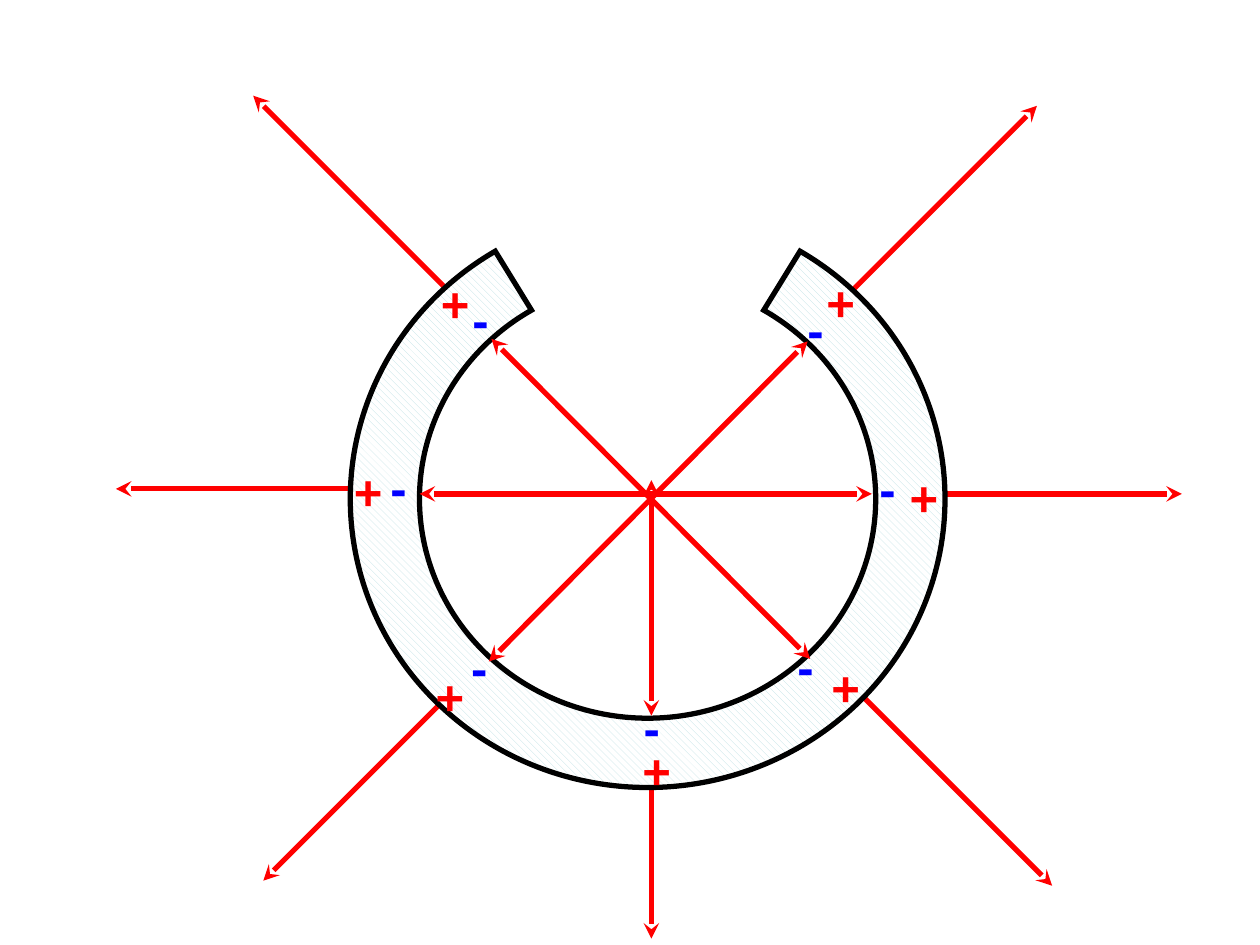
"""Draw a cut charged ring with field arrows inside and outside it."""
from lxml import etree
from pptx import Presentation
from pptx.dml.color import RGBColor
from pptx.enum.dml import MSO_PATTERN
from pptx.enum.shapes import MSO_CONNECTOR, MSO_SHAPE
from pptx.enum.text import MSO_AUTO_SIZE
from pptx.oxml.ns import qn
from pptx.util import Inches, Pt

STRAIGHT = MSO_CONNECTOR.STRAIGHT
ARC = MSO_SHAPE.BLOCK_ARC
HATCH = MSO_PATTERN.WIDE_DOWNWARD_DIAGONAL
GROW = MSO_AUTO_SIZE.SHAPE_TO_FIT_TEXT
RED = RGBColor(0xFF, 0x00, 0x00)
BLUE = RGBColor(0x00, 0x00, 0xFF)
BLACK = RGBColor(0x00, 0x00, 0x00)
WHITE = RGBColor(0xFF, 0xFF, 0xFF)
TEAL = RGBColor(0xBB, 0xE0, 0xE3)
STROKE = Pt(3)

deck = Presentation()
deck.slide_width, deck.slide_height = Inches(10), Inches(7.5)
slide = deck.slides.add_slide(deck.slide_layouts[6])
cell = deck.slide_width / 100


def write(text, group, col, row, color=BLACK, size=28, font="Arial", bold=True):
    left, top, width, height = (round(n * cell) for n in (col, row, 4.2, 5.7))
    box = group.shapes.add_textbox(left, top, width, height)
    frame = box.text_frame
    frame.word_wrap = True
    frame.auto_size = GROW
    run = frame.paragraphs[0].add_run()
    run.text = text
    run.font.name, run.font.size, run.font.bold = font, Pt(size), bold
    run.font.color.rgb = color


def point(group, start, end, heads):
    ends = [round(n * cell) for n in (*start, *end)]
    arrow = group.shapes.add_connector(STRAIGHT, *ends)
    arrow.line.color.rgb = RED
    arrow.line.width = STROKE
    props = arrow.element.spPr
    stroke = props.find(qn("a:ln"))
    for head in heads:
        etree.SubElement(stroke, qn("a:" + head)).set("type", "stealth")
    etree.SubElement(props, qn("a:effectLst"))


one, both = ["tailEnd"], ["headEnd", "tailEnd"]
reach = 16.5
outer = slide.shapes.add_group_shape()
point(outer, (27.9, 38.8), (9.2, 38.8), one)
point(outer, (75, 39.2), (93.8, 39.2), one)
for col, row, across, down in [
    (65.8, 24.9, 1, -1),
    (37.4, 53.4, -1, 1),
    (67, 53.8, 1, 1),
    (36.6, 24.1, -1, -1),
]:
    tip = col + across * reach, row + down * reach
    point(outer, (col, row), tip, both)
point(outer, (51.7, 59.5), (51.7, 74.5), both)

gap = 31.6
ring = slide.shapes.add_shape(
    ARC, *(round(n * cell) for n in (27.8, 16.7, 47.2, 45.8)))
ring.shadow.inherit = False
ring.adjustments[0] = (270 + gap) * 0.6
ring.adjustments[1] = (270 - gap) * 0.6
ring.adjustments[2] = 0.12
ring.fill.patterned()
ring.fill.pattern = HATCH
ring.fill.fore_color.rgb = TEAL
ring.fill.back_color.rgb = WHITE
ring.line.color.rgb = BLACK
ring.line.width = STROKE
edge = ring.element.spPr.find(qn("a:ln"))
etree.SubElement(edge, qn("a:miter")).set("lim", "800000")

plus = [(34, 21.2), (27.1, 36.1), (33.6, 52.4), (50, 58.3),
        (65, 51.7), (71.2, 36.6), (64.6, 21.1)]
minus = [(30, 35.8), (36.5, 22.5), (36.4, 50.1), (50.1, 54.9),
         (62.3, 50), (63.1, 23.3), (68.8, 35.9)]
for sign, color, spots in [("+", RED, plus), ("-", BLUE, minus)]:
    group = slide.shapes.add_group_shape()
    for col, row in spots:
        write(sign, group, col, row, color=color)

inner = slide.shapes.add_group_shape()
for start, end in [
    ((39, 26.9), (64.3, 52.3)),
    ((33.3, 39.2), (69.2, 39.2)),
    ((51.7, 56.8), (51.7, 38.1)),
    ((64.1, 27.1), (38.8, 52.5)),
]:
    point(inner, start, end, both)

deck.save("out.pptx")
